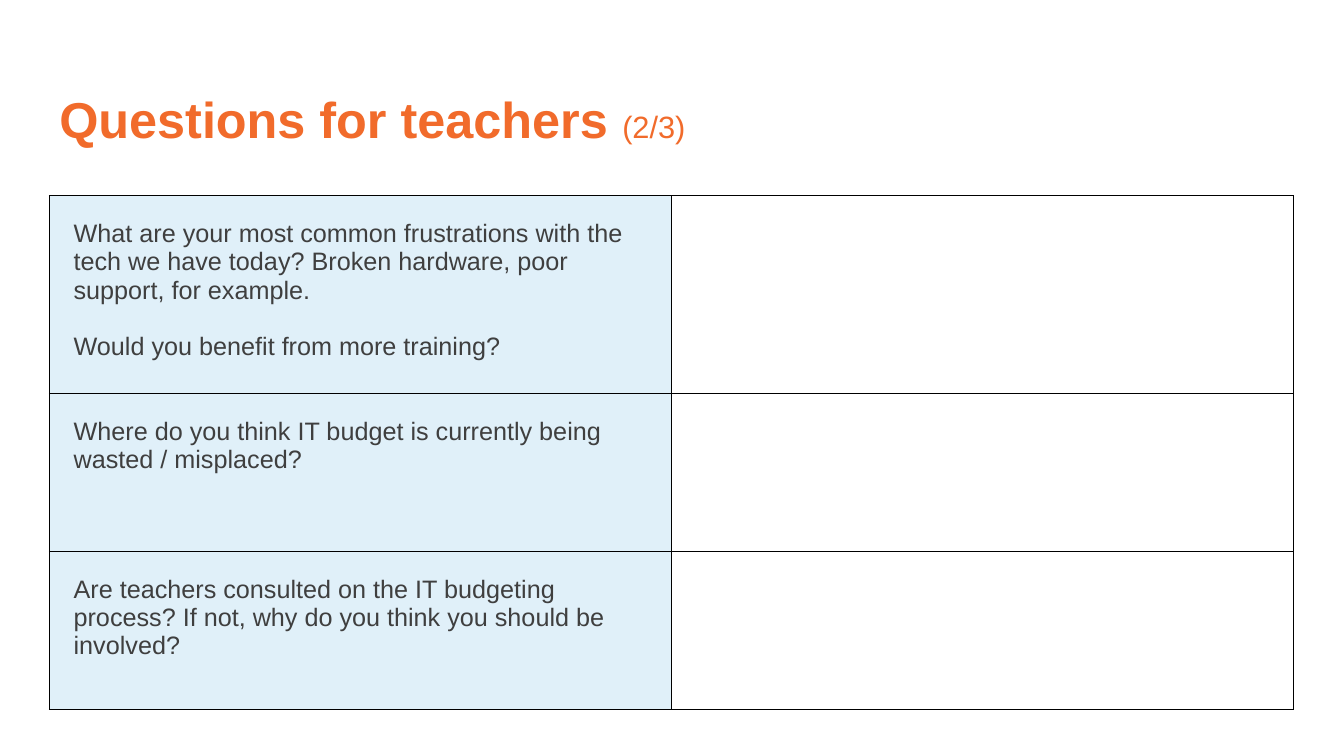
from lxml import etree
from pptx import Presentation
from pptx.dml.color import RGBColor
from pptx.enum import text
from pptx.oxml import ns
from pptx.util import Pt

COLORS = {"title": "F16B2B", "body": "3F3F3F", "question": "E0F0F9",
          "answer": "FFFFFF", "border": "000000"}

QUESTIONS = [
    ["What are your most common frustrations with the tech we have today? "
     "Broken hardware, poor support, for example.",
     "Would you benefit from more training?"],
    ["Where do you think IT budget is currently being wasted / misplaced?"],
    ["Are teachers consulted on the IT budgeting process? "
     "If not, why do you think you should be involved?"],
]


class SlideBuilder:
    """Holds the style and the current slide."""
    font_name = "Arial"
    cell_margin = 17.3
    paragraph_gap = 20

    def __init__(self, slide):
        self.slide = slide

    def style(self, font, size, color, bold=False):
        font.name, font.size, font.bold = self.font_name, Pt(size), bold
        font.color.rgb = RGBColor.from_string(COLORS[color])

    def title(self, left, top, width, height, heading, counter):
        box = self.slide.shapes.add_textbox(Pt(left), Pt(top), Pt(width), Pt(height))
        frame = box.text_frame
        frame.word_wrap = True
        frame.vertical_anchor = text.MSO_ANCHOR.MIDDLE
        paragraph = frame.paragraphs[0]
        paragraph.line_spacing = 0.9
        for content, size, bold in ((heading, 36, True), (counter, 22, False)):
            run = paragraph.add_run()
            run.text = content
            self.style(run.font, size, "title", bold)

    def question_table(self, left, top, column_width, row_heights, questions):
        frame = self.slide.shapes.add_table(
            len(questions), 2, Pt(left), Pt(top),
            Pt(2 * column_width), Pt(sum(row_heights)))
        table = frame.table
        table.first_row = table.horz_banding = False
        for column in table.columns:
            column.width = Pt(column_width)
        for row, height, paragraphs in zip(table.rows, row_heights, questions):
            row.height = Pt(height)
            question, answer = row.cells
            self.cell(question, "question", paragraphs)
            self.cell(answer, "answer")

    def cell(self, cell, fill, paragraphs=()):
        cell.margin_left = cell.margin_right = Pt(self.cell_margin)
        cell.margin_top = cell.margin_bottom = Pt(self.cell_margin)
        cell.text_frame.text = "\n".join(paragraphs)
        for index, paragraph in enumerate(cell.text_frame.paragraphs):
            if index:
                paragraph.space_before = Pt(self.paragraph_gap)
            for run in paragraph.runs:
                self.style(run.font, 18, "body")
        self.borders(cell)
        cell.fill.solid()
        cell.fill.fore_color.rgb = RGBColor.from_string(COLORS[fill])

    def borders(self, cell):
        properties = cell._tc.get_or_add_tcPr()
        for side in ("lnL", "lnR", "lnT", "lnB"):
            line = etree.SubElement(properties, ns.qn(f"a:{side}"), w=str(Pt(0.75)))
            solid = etree.SubElement(line, ns.qn("a:solidFill"))
            etree.SubElement(solid, ns.qn("a:srgbClr"), val=COLORS["border"])


def main():
    presentation = Presentation()
    presentation.slide_width, presentation.slide_height = Pt(960), Pt(540)
    builder = SlideBuilder(presentation.slides.add_slide(presentation.slide_layouts[6]))

    # Heading
    builder.title(35.3, 35.3, 828, 104.4, "Questions for teachers ", "(2/3)")

    # Questions on the left, room for answers on the right
    builder.question_table(35.3, 139.7, 444.4, [135, 113, 113], QUESTIONS)

    presentation.save("out.pptx")


if __name__ == "__main__":
    main()
